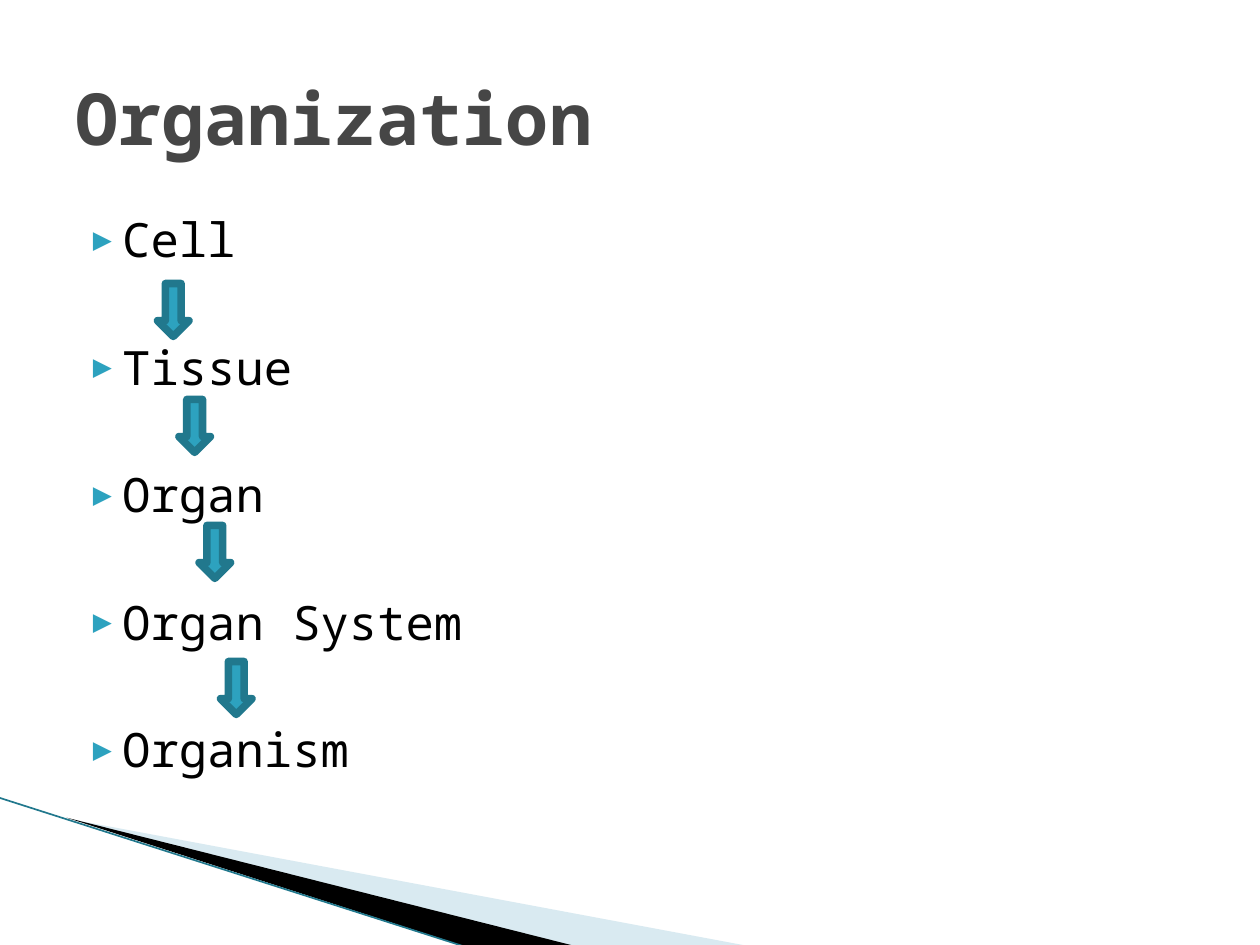
from dataclasses import dataclass

import pptx
import pptx.dml.color
import pptx.enum.shapes
import pptx.enum.text
import pptx.oxml
import pptx.oxml.ns
import pptx.util

Inches = pptx.util.Inches
Pt = pptx.util.Pt
FONT = "Noto Sans Mono"
TEAL, DARK = "2DA2BF", "21788D"
LEVELS = ["Cell", "Tissue", "Organ", "Organ System", "Organism"]


@dataclass
class Arrow:
    left: float
    top: float


@dataclass
class Wedge:
    points: list[tuple[float, float]]
    fill: str
    alpha: int = 100


ARROWS = [Arrow(1.25, 2.25), Arrow(1.42, 3.17), Arrow(1.58, 4.17), Arrow(1.75, 5.25)]
WEDGES = [
    Wedge([(0.55, 6.5), (5.95, 7.51), (4.56, 7.51)], "A0CBDC", 40),
    Wedge([(0.53, 6.49), (4.57, 7.51), (3.72, 7.52)], "000000"),
]


def rgb(code: str) -> pptx.dml.color.RGBColor:
    return pptx.dml.color.RGBColor.from_string(code)


def add_xml(parent, tag: str, **attrs):
    node = pptx.oxml.parse_xml(f"<a:{tag} {pptx.oxml.ns.nsdecls('a')}/>")
    for key, value in attrs.items():
        node.set(key, str(value))
    parent.append(node)
    return node


def add_bullet(para) -> None:
    props = para._p.get_or_add_pPr()
    props.set("marL", str(Inches(0.37)))
    props.set("indent", str(Inches(-0.31)))
    add_xml(add_xml(props, "buClr"), "srgbClr", val=TEAL)
    add_xml(props, "buSzPct", val=68000)
    add_xml(props, "buFont", typeface=FONT)
    add_xml(props, "buChar", char="▶")


def write(para, text: str, *, size: float, color: str, bold: bool = False,
          bullet: bool = False, before: float = 0) -> None:
    if bullet:
        add_bullet(para)
    para.alignment = pptx.enum.text.PP_ALIGN.LEFT
    para.space_before = Pt(before)
    run = para.add_run()
    run.text = text
    font = run.font
    font.name, font.size, font.bold = FONT, Pt(size), bold
    font.color.rgb = rgb(color)


def place(holder, left: float, top: float, width: float, height: float):
    """Move a placeholder and return its text frame."""
    holder.left, holder.top = Inches(left), Inches(top)
    holder.width, holder.height = Inches(width), Inches(height)
    frame = holder.text_frame
    frame.auto_size = pptx.enum.text.MSO_AUTO_SIZE.NONE
    frame.word_wrap = True
    return frame


def draw_wedge(slide, wedge: Wedge) -> None:
    points = [(Inches(x), Inches(y)) for x, y in wedge.points]
    pen = slide.shapes.build_freeform(*points[0])
    pen.add_line_segments(points[1:], close=True)
    shape = pen.convert_to_shape()
    shape.shadow.inherit = False
    shape.line.fill.background()
    shape.fill.solid()
    shape.fill.fore_color.rgb = rgb(wedge.fill)
    if wedge.alpha < 100:
        color = shape._element.spPr.find(".//" + pptx.oxml.ns.qn("a:srgbClr"))
        add_xml(color, "alpha", val=wedge.alpha * 1000)


def draw_edge(slide) -> None:
    edge = slide.shapes.add_connector(
        pptx.enum.shapes.MSO_CONNECTOR.STRAIGHT,
        Inches(-0.01), Inches(6.33), Inches(3.71), Inches(7.52))
    edge.line.color.rgb = rgb(DARK)
    edge.line.width = Pt(0.95)
    add_xml(edge._element.spPr, "effectLst")


def draw_arrow(slide, arrow: Arrow) -> None:
    shape = slide.shapes.add_shape(
        pptx.enum.shapes.MSO_SHAPE.DOWN_ARROW,
        Inches(arrow.left), Inches(arrow.top), Inches(0.25), Inches(0.42))
    shape.shadow.inherit = False
    shape.fill.solid()
    shape.fill.fore_color.rgb = rgb(TEAL)
    shape.line.color.rgb = rgb(DARK)
    shape.line.width = Pt(4.33)
    add_xml(shape.line._get_or_add_ln(), "round")


def main() -> None:
    deck = pptx.Presentation()
    deck.slide_width, deck.slide_height = Inches(10), Inches(7.5)
    slide = deck.slides.add_slide(deck.slide_layouts[1])

    for wedge in WEDGES:
        draw_wedge(slide, wedge)
    draw_edge(slide)

    title = place(slide.shapes.title, 0.5, 0.3, 9, 1.25)
    title.vertical_anchor = pptx.enum.text.MSO_ANCHOR.MIDDLE
    write(title.paragraphs[0], "Organization", size=41, color="464646", bold=True)

    body = place(slide.placeholders[1], 0.5, 1.62, 9, 4.95)
    for i, level in enumerate(LEVELS):
        para = body.add_paragraph() if i else body.paragraphs[0]
        write(para, level, size=27, color="000000", bullet=True,
              before=40.4 if i else 0)

    for arrow in ARROWS:
        draw_arrow(slide, arrow)
    deck.save("out.pptx")


if __name__ == "__main__":
    main()
